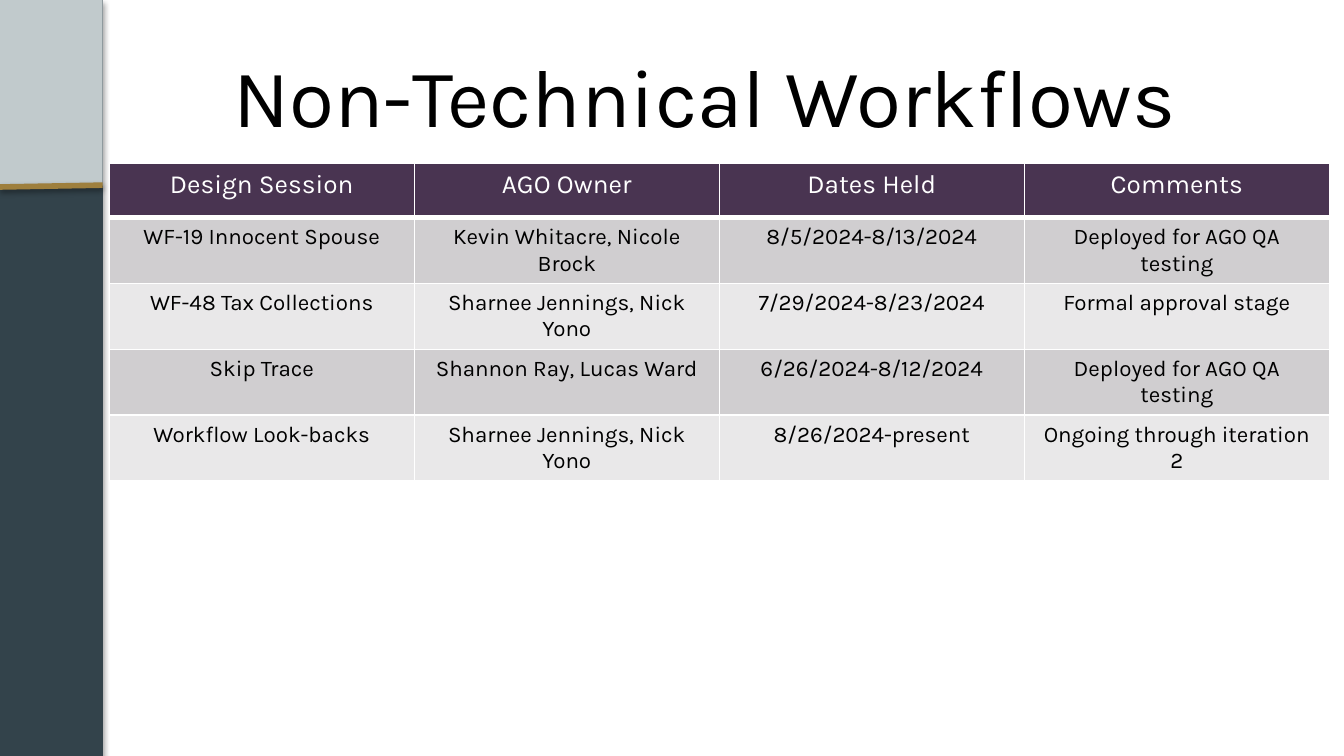
from lxml.etree import SubElement
from pptx import Presentation
from pptx.dml.color import RGBColor
from pptx.enum.shapes import MSO_CONNECTOR, MSO_SHAPE
from pptx.enum.text import MSO_ANCHOR, MSO_AUTO_SIZE, PP_ALIGN
from pptx.oxml import parse_xml
from pptx.oxml.ns import nsdecls, qn
from pptx.util import Pt

HEX = {
    "black": "000000", "white": "FFFFFF", "slate": "33434B", "mist": "C1CACC",
    "gold": "9E7F3D", "plum": "493451", "dark": "D0CED0", "light": "E9E8E9",
}
ROWS = [
    ["Design Session", "AGO Owner", "Dates Held", "Comments"],
    ["WF-19 Innocent Spouse", "Kevin Whitacre, Nicole Brock",
     "8/5/2024-8/13/2024", "Deployed for AGO QA testing"],
    ["WF-48 Tax Collections", "Sharnee Jennings, Nick Yono",
     "7/29/2024-8/23/2024", "Formal approval stage"],
    ["Skip Trace", "Shannon Ray, Lucas Ward",
     "6/26/2024-8/12/2024", "Deployed for AGO QA testing"],
    ["Workflow Look-backs", "Sharnee Jennings, Nick Yono",
     "8/26/2024-present", "Ongoing through iteration 2"],
]


def shade(name):
    return RGBColor.from_string(HEX[name])


def write(frame, text, size=12, color="black", align=PP_ALIGN.CENTER):
    para = frame.paragraphs[0]
    para.alignment = align
    run = para.add_run()
    run.text = text
    run.font.name = "Karla"
    run.font.size = Pt(size)
    run.font.color.rgb = shade(color)


def cast(shape, blur, drop, alpha):
    shape.element.spPr.append(parse_xml(
        f'<a:effectLst {nsdecls("a")}><a:outerShdw blurRad="{Pt(blur)}" '
        f'dist="{Pt(drop)}" dir="5400000" rotWithShape="0">'
        f'<a:srgbClr val="{HEX["black"]}"><a:alpha val="{alpha * 1000}"/>'
        '</a:srgbClr></a:outerShdw></a:effectLst>'))


def panel(slide, high, color, edge=None):
    box = slide.shapes.add_shape(MSO_SHAPE.RECTANGLE, 0, 0, Pt(55), Pt(high))
    box.fill.solid()
    box.fill.fore_color.rgb = shade(color)
    if edge:
        box.line.color.rgb = shade(edge)
        box.line.width = Pt(0.75)
        cast(box, 3.1, 1.8, 35)
    else:
        box.line.fill.background()
        box.shadow.inherit = False


def rule(slide):
    line = slide.shapes.add_connector(
        MSO_CONNECTOR.STRAIGHT, 0, Pt(100.2), Pt(55), Pt(99.2))
    line.line.color.rgb = shade("gold")
    line.line.width = Pt(3)
    cast(line, 3.1, 1.6, 38)


def head(slide, text):
    title = slide.shapes.title
    title.left, title.top = Pt(71.5), Pt(16.5)
    title.width, title.height = Pt(612.5), Pt(68)
    frame = title.text_frame
    frame.auto_size = MSO_AUTO_SIZE.NONE
    frame.vertical_anchor = MSO_ANCHOR.MIDDLE
    write(frame, text, size=44)


def border(cell, **widths):
    props = cell._tc.get_or_add_tcPr()
    for spot, side in enumerate("LRTB"):
        line = SubElement(props, qn(f"a:ln{side}"), w=str(Pt(widths.get(side, 1))))
        fill = SubElement(line, qn("a:solidFill"))
        SubElement(fill, qn("a:srgbClr"), val=HEX["white"])
        props.insert(spot, line)


def grid(slide, rows):
    wide, high = 163.4, 29.4
    table = slide.shapes.add_table(
        len(rows), len(rows[0]), Pt(58.6), Pt(87.2),
        Pt(wide * len(rows[0])), Pt(high * len(rows))).table
    for col in table.columns:
        col.width = Pt(wide)
    for i, row in enumerate(rows):
        table.rows[i].height = Pt(high)
        for j, text in enumerate(row):
            cell = table.cell(i, j)
            cell.fill.solid()
            if i == 0:
                cell.fill.fore_color.rgb = shade("plum")
                write(cell.text_frame, text, size=14, color="white")
                border(cell, B=3)
            else:
                cell.fill.fore_color.rgb = shade("dark" if i % 2 else "light")
                write(cell.text_frame, text)
                border(cell, T=3 if i == 1 else 1)


def main():
    """Build the workflow status slide."""
    deck = Presentation()
    deck.slide_width, deck.slide_height = Pt(720), Pt(405)
    slide = deck.slides.add_slide(deck.slide_layouts[5])
    panel(slide, 405, "slate", edge="slate")
    panel(slide, 99.4, "mist")
    rule(slide)
    head(slide, "Non-Technical Workflows")
    grid(slide, ROWS)
    deck.save("out.pptx")


if __name__ == "__main__":
    main()
